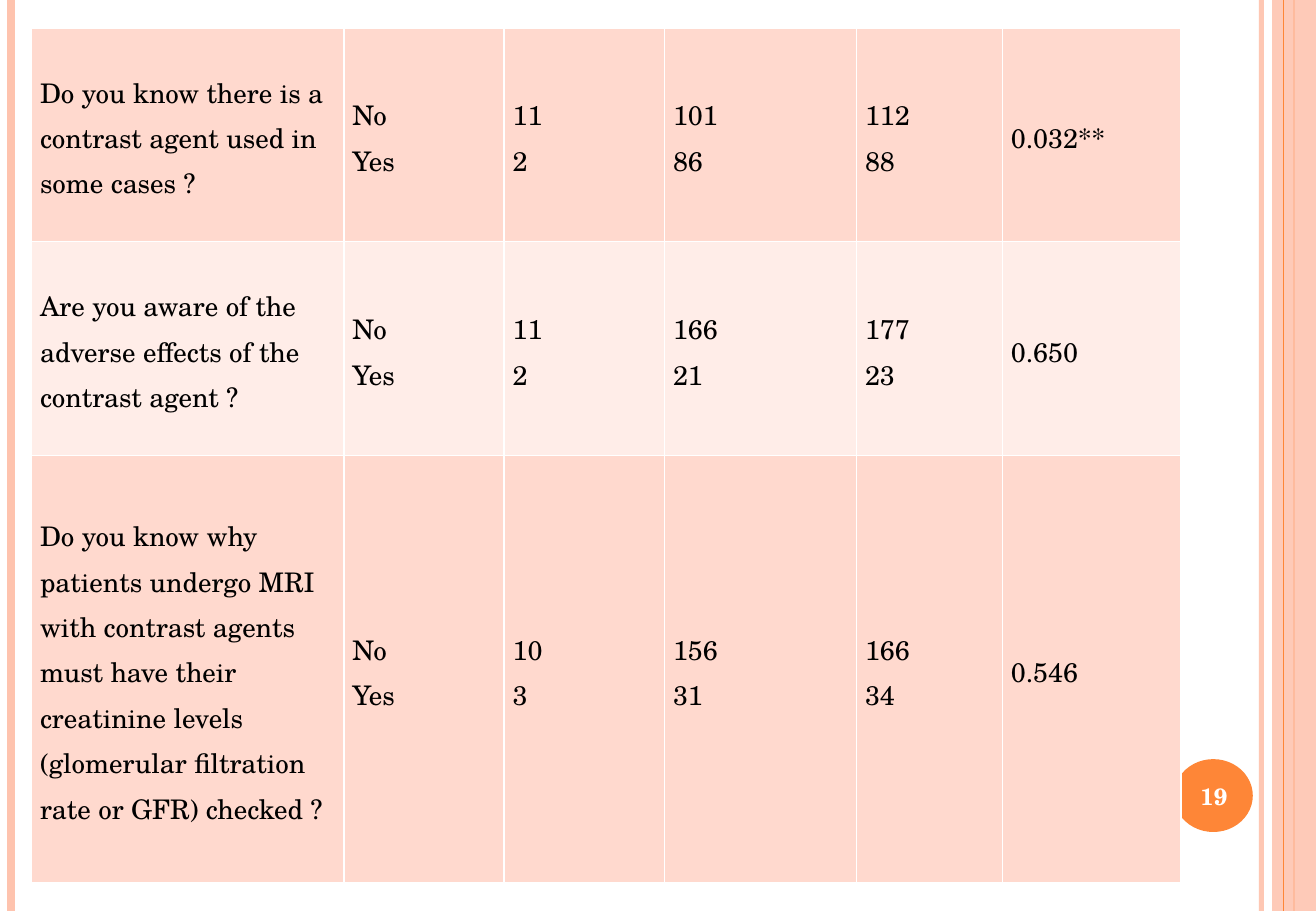
from dataclasses import dataclass

from lxml.etree import SubElement
from pptx import Presentation
from pptx.dml.color import RGBColor
from pptx.enum.shapes import MSO_CONNECTOR, MSO_SHAPE
from pptx.enum.text import MSO_ANCHOR, PP_ALIGN
from pptx.oxml.ns import qn
from pptx.util import Inches, Pt


@dataclass(frozen=True)
class Theme:
    font: str = "TeX Gyre Schola"
    orange: str = "FE8637"
    peach: str = "FEC3AE"
    band_dark: str = "FFD9CE"
    band_light: str = "FFEDE8"
    white: str = "FFFFFF"
    black: str = "000000"
    body_size: int = 16
    number_size: int = 14


@dataclass(frozen=True)
class Stripe:
    x: float
    color: str
    width: float
    opacity: int = 100


@dataclass(frozen=True)
class Question:
    text: str
    height: float
    counts: tuple[str, ...]
    p_value: str


THEME = Theme()
SLIDE_WIDTH, SLIDE_HEIGHT = 10.83, 7.5
COLUMN_WIDTHS = (2.57, 1.32, 1.32, 1.58, 1.2, 1.47)

LEFT_STRIPES = (
    Stripe(10.38, THEME.peach, 3, 93),
    Stripe(0.09, THEME.peach, 4.5),
    Stripe(10.65, THEME.orange, 1.5),
)
BAND_STRIPE = Stripe(10.56, THEME.orange, 0.75)

QUESTIONS = (
    Question("Do you know there is a contrast agent used in some cases ?",
             1.76, ("11\n2", "101\n86", "112\n88"), "0.032**"),
    Question("Are you aware of the adverse effects of the contrast agent ?",
             1.76, ("11\n2", "166\n21", "177\n23"), "0.650"),
    Question("Do you know why patients undergo MRI with contrast agents must have "
             "their creatinine levels (glomerular filtration rate or GFR) checked ?",
             3.52, ("10\n3", "156\n31", "166\n34"), "0.546"),
)


def rgb(color: str) -> RGBColor:
    return RGBColor.from_string(color)


def set_opacity(properties, percent: int) -> None:
    """Add an alpha value to the first solid colour in the properties."""
    color = next(properties.iter(qn("a:srgbClr")))
    SubElement(color, qn("a:alpha"), val=str(percent * 1000))


def write_text(frame, text: str, *, size: int, color: str, bold: bool = False,
               align: PP_ALIGN = PP_ALIGN.LEFT, spacing: float = 1.0) -> None:
    frame.word_wrap = True
    frame.text = text
    for paragraph in frame.paragraphs:
        paragraph.alignment = align
        paragraph.line_spacing = spacing
        for run in paragraph.runs:
            run.font.name = THEME.font
            run.font.size = Pt(size)
            run.font.bold = bold
            run.font.color.rgb = rgb(color)


def add_stripe(slide, stripe: Stripe) -> None:
    x = Inches(stripe.x)
    connector = slide.shapes.add_connector(
        MSO_CONNECTOR.STRAIGHT, x, 0, x, Inches(SLIDE_HEIGHT))
    connector.line.color.rgb = rgb(stripe.color)
    connector.line.width = Pt(stripe.width)
    properties = connector._element.spPr
    if stripe.opacity < 100:
        set_opacity(properties, stripe.opacity)
    SubElement(properties, qn("a:effectLst"))


def add_filled_shape(slide, kind: MSO_SHAPE, left: float, top: float,
                     width: float, height: float, color: str):
    shape = slide.shapes.add_shape(
        kind, Inches(left), Inches(top), Inches(width), Inches(height))
    shape.shadow.inherit = False
    shape.fill.solid()
    shape.fill.fore_color.rgb = rgb(color)
    shape.line.fill.background()
    return shape


def add_page_number(slide, number: str) -> None:
    add_filled_shape(slide, MSO_SHAPE.OVAL, 9.66, 6.25, 0.65, 0.6, THEME.orange)
    box = slide.shapes.add_textbox(
        Inches(9.63), Inches(6.27), Inches(0.72), Inches(0.57))
    box.text_frame.vertical_anchor = MSO_ANCHOR.MIDDLE
    write_text(box.text_frame, number, size=THEME.number_size, color=THEME.white,
               bold=True, align=PP_ALIGN.CENTER)


def format_cell(cell, text: str, fill: str) -> None:
    cell.margin_left = cell.margin_right = Inches(0.07)
    cell.margin_top = cell.margin_bottom = 0
    cell.vertical_anchor = MSO_ANCHOR.MIDDLE
    write_text(cell.text_frame, text, size=THEME.body_size, color=THEME.black,
               spacing=1.15)
    # Borders come before the fill in the cell properties
    properties = cell._tc.get_or_add_tcPr()
    for side in ("a:lnL", "a:lnR", "a:lnT", "a:lnB"):
        border = SubElement(properties, qn(side), w=str(Pt(1)))
        solid = SubElement(border, qn("a:solidFill"))
        SubElement(solid, qn("a:srgbClr"), val=THEME.white)
    cell.fill.solid()
    cell.fill.fore_color.rgb = rgb(fill)


def add_question_table(slide, questions: tuple[Question, ...]) -> None:
    total_height = sum(question.height for question in questions)
    table = slide.shapes.add_table(
        len(questions), len(COLUMN_WIDTHS), Inches(0.26), Inches(0.23),
        Inches(sum(COLUMN_WIDTHS)), Inches(total_height)).table
    table.first_row = table.horz_banding = False
    for column, width in zip(table.columns, COLUMN_WIDTHS):
        column.width = Inches(width)
    for index, (row, question) in enumerate(zip(table.rows, questions)):
        row.height = Inches(question.height)
        fill = THEME.band_light if index % 2 else THEME.band_dark
        texts = (question.text, "No\nYes", *question.counts, question.p_value)
        for cell, text in zip(row.cells, texts):
            format_cell(cell, text, fill)


def main() -> None:
    presentation = Presentation()
    presentation.slide_width = Inches(SLIDE_WIDTH)
    presentation.slide_height = Inches(SLIDE_HEIGHT)
    slide = presentation.slides.add_slide(presentation.slide_layouts[6])

    # Side stripes and the translucent band on the right
    for stripe in LEFT_STRIPES:
        add_stripe(slide, stripe)
    band = add_filled_shape(
        slide, MSO_SHAPE.RECTANGLE, 10.47, 0, 0.36, SLIDE_HEIGHT, THEME.peach)
    set_opacity(band._element.spPr, 87)
    add_stripe(slide, BAND_STRIPE)

    # Page number, partly under the table
    add_page_number(slide, "19")

    # Survey answers
    add_question_table(slide, QUESTIONS)

    presentation.save("out.pptx")


if __name__ == "__main__":
    main()
